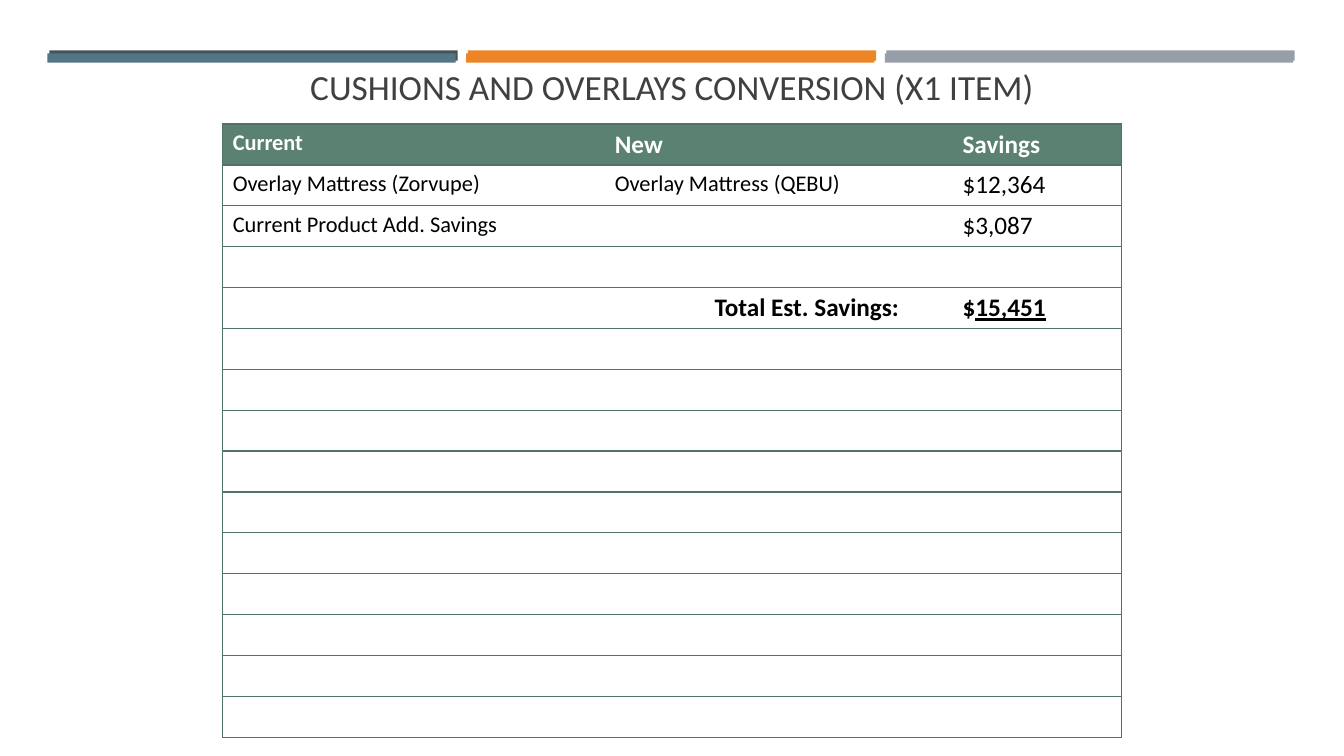
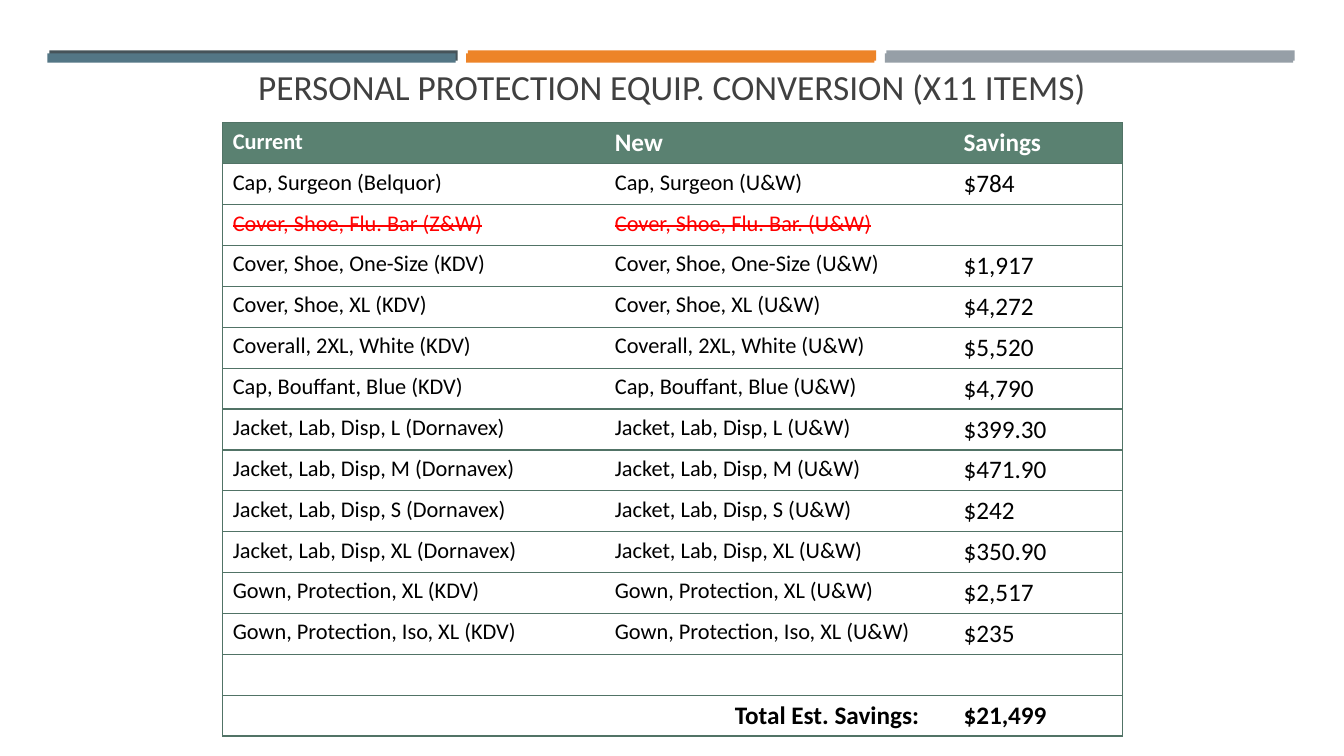
from itertools import chain, repeat, islice
from pptx import Presentation
from pptx.dml.color import RGBColor
from pptx.enum.shapes import MSO_SHAPE as Preset
from pptx.enum.text import MSO_ANCHOR as Anchor, PP_ALIGN as Align
from pptx.oxml import parse_xml
from pptx.oxml.ns import nsdecls
from pptx.util import Pt

FONT = "Calibri"
INK, WHITE, TITLE_GREY, RED = "000000", "FFFFFF", "404040", "FF0000"
HEADER_GREEN, RULE_GREEN = "5A8171", "517366"
ORANGE, SILVER = "ED8428", "969FA7"

ROW_COUNT, ROW_HEIGHT = 15, 29.2
CURRENT, NEW, SAVINGS = 0, 2, 4
ITEM_SIZES = {CURRENT: 16, NEW: 16, SAVINGS: 18}
HEADER_SIZES = {CURRENT: 16, NEW: 18, SAVINGS: 18}
TOTAL_SIZES = {NEW: 18, SAVINGS: 18}

BAR_ROWS = [
    {"box": (35.3, 36, 889.4, 7.4), "colours": ("465359", ORANGE, SILVER)},
    {"box": (33.9, 38.2, 889.8, 6.5), "colours": ("537685", ORANGE, SILVER)},
]
BAR_WIDTH = 291.6
TITLE_BOX = (46, 55, 868, 23)

HEADER = {"texts": {CURRENT: "Current", NEW: "New", SAVINGS: "Savings"},
          "sizes": HEADER_SIZES, "bold": True, "colour": WHITE, "fill": HEADER_GREEN}
BLANK = {"texts": {}}


def item(current, new, savings, **style):
    texts = {CURRENT: current, NEW: new, SAVINGS: savings}
    return {"texts": texts, "sizes": ITEM_SIZES, **style}


def total(amount, **style):
    texts = {NEW: "Total Est. Savings:", SAVINGS: amount}
    return {"texts": texts, "sizes": TOTAL_SIZES, "bold": True,
            "align": {NEW: Align.RIGHT}, **style}


SLIDES = [
    {
        "title": "CUSHIONS AND OVERLAYS CONVERSION (X1 ITEM)",
        "table_top": 88.6,
        "columns": (251.3, 21.6, 217.4, 31, 121),
        "rows": [
            item("Overlay Mattress (Zorvupe)", "Overlay Mattress (QEBU)", "$12,364"),
            item("Current Product Add. Savings", "", "$3,087"),
            BLANK,
            total("$15,451", underline_amount=True),
        ],
    },
    {
        "title": "PERSONAL PROTECTION EQUIP. CONVERSION (X11 ITEMS)",
        "table_top": 87.8,
        "columns": (251.3, 21.6, 231.8, 16.6, 121),
        "rows": [
            item("Cap, Surgeon (Belquor)", "Cap, Surgeon (U&W)", "$784"),
            item("Cover, Shoe, Flu. Bar (Z&W)", "Cover, Shoe, Flu. Bar. (U&W)", "",
                 colour=RED, strike=True),
            item("Cover, Shoe, One-Size (KDV)", "Cover, Shoe, One-Size (U&W)", "$1,917"),
            item("Cover, Shoe, XL (KDV)", "Cover, Shoe, XL (U&W)", "$4,272"),
            item("Coverall, 2XL, White (KDV)", "Coverall, 2XL, White (U&W)", "$5,520"),
            item("Cap, Bouffant, Blue (KDV)", "Cap, Bouffant, Blue (U&W)", "$4,790"),
            item("Jacket, Lab, Disp, L (Dornavex)", "Jacket, Lab, Disp, L (U&W)", "$399.30"),
            item("Jacket, Lab, Disp, M (Dornavex)", "Jacket, Lab, Disp, M (U&W)", "$471.90"),
            item("Jacket, Lab, Disp, S (Dornavex)", "Jacket, Lab, Disp, S (U&W)", "$242"),
            item("Jacket, Lab, Disp, XL (Dornavex)", "Jacket, Lab, Disp, XL (U&W)", "$350.90"),
            item("Gown, Protection, XL (KDV)", "Gown, Protection, XL (U&W)", "$2,517"),
            item("Gown, Protection, Iso, XL (KDV)", "Gown, Protection, Iso, XL (U&W)", "$235"),
            BLANK,
            total("$21,499"),
        ],
    },
]


def points(box):
    return [Pt(length) for length in box]


def set_attributes(target, values):
    for name, value in values.items():
        setattr(target, name, value)


def paint(fill, colour):
    fill.solid()
    fill.fore_color.rgb = RGBColor.from_string(colour)


def add_run(paragraph, text, size, colour, strike=False, **style):
    run = paragraph.add_run()
    run.text = text
    set_attributes(run.font, {"name": FONT, "size": Pt(size), **style})
    run.font.color.rgb = RGBColor.from_string(colour)
    if strike:
        run._r.get_or_add_rPr().set("strike", "sngStrike")


def add_bars(slide, box, colours):
    left, top, width, height = box
    pitch = (width - BAR_WIDTH) / (len(colours) - 1)
    for index, colour in enumerate(colours):
        bar_box = (left + index * pitch, top, BAR_WIDTH, height)
        bar = slide.shapes.add_shape(Preset.RECTANGLE, *points(bar_box))
        bar.shadow.inherit = False
        bar.line.fill.background()
        paint(bar.fill, colour)


def add_title(slide, box, text):
    frame = slide.shapes.add_textbox(*points(box)).text_frame
    set_attributes(frame, {"word_wrap": True, "vertical_anchor": Anchor.BOTTOM,
                           "margin_top": 0, "margin_bottom": Pt(1)})
    paragraph = frame.paragraphs[0]
    paragraph.alignment = Align.CENTER
    add_run(paragraph, text, 25.2, TITLE_GREY)


def set_borders(cell, ruled_sides):
    properties = cell._tc.get_or_add_tcPr()
    for side in "LRTB":
        if side in ruled_sides:
            stroke = f'<a:solidFill><a:srgbClr val="{RULE_GREEN}"/></a:solidFill>'
        else:
            stroke = "<a:noFill/>"
        properties.append(parse_xml(
            f'<a:ln{side} {nsdecls("a")} w="{Pt(1)}">{stroke}</a:ln{side}>'))


def fill_cell(cell, column, row):
    text = row["texts"].get(column)
    if not text:
        return
    paragraph = cell.text_frame.paragraphs[0]
    paragraph.alignment = row.get("align", {}).get(column)
    style = {"size": row["sizes"][column], "colour": row.get("colour", INK),
             "bold": row.get("bold", False), "strike": row.get("strike", False)}
    if column == SAVINGS and row.get("underline_amount"):
        add_run(paragraph, text[0], **style)
        add_run(paragraph, text[1:], underline=True, **style)
    else:
        add_run(paragraph, text, **style)


def add_savings_table(slide, left, top, columns, rows):
    box = (left, top, sum(columns), ROW_COUNT * ROW_HEIGHT)
    table = slide.shapes.add_table(ROW_COUNT, len(columns), *points(box)).table
    set_attributes(table, {"first_row": False, "horz_banding": False})
    for table_column, width in zip(table.columns, columns):
        table_column.width = Pt(width)
    all_rows = islice(chain([HEADER], rows, repeat(BLANK)), ROW_COUNT)
    for table_row, row in zip(table.rows, all_rows):
        table_row.height = Pt(ROW_HEIGHT)
        for column, cell in enumerate(table_row.cells):
            outer_side = {0: "L", len(columns) - 1: "R"}.get(column, "")
            set_borders(cell, "TB" + outer_side)
            if "fill" in row:
                paint(cell.fill, row["fill"])
            else:
                cell.fill.background()
            fill_cell(cell, column, row)


def add_conversion_slide(presentation, content):
    slide = presentation.slides.add_slide(presentation.slide_layouts[6])
    for bar_row in BAR_ROWS:
        add_bars(slide, **bar_row)
    add_title(slide, TITLE_BOX, content["title"])
    add_savings_table(slide, 159.1, content["table_top"], content["columns"], content["rows"])


def main():
    presentation = Presentation()
    set_attributes(presentation, {"slide_width": Pt(960), "slide_height": Pt(540)})
    for content in SLIDES:
        add_conversion_slide(presentation, content)
    presentation.save("out.pptx")


if __name__ == "__main__":
    main()
